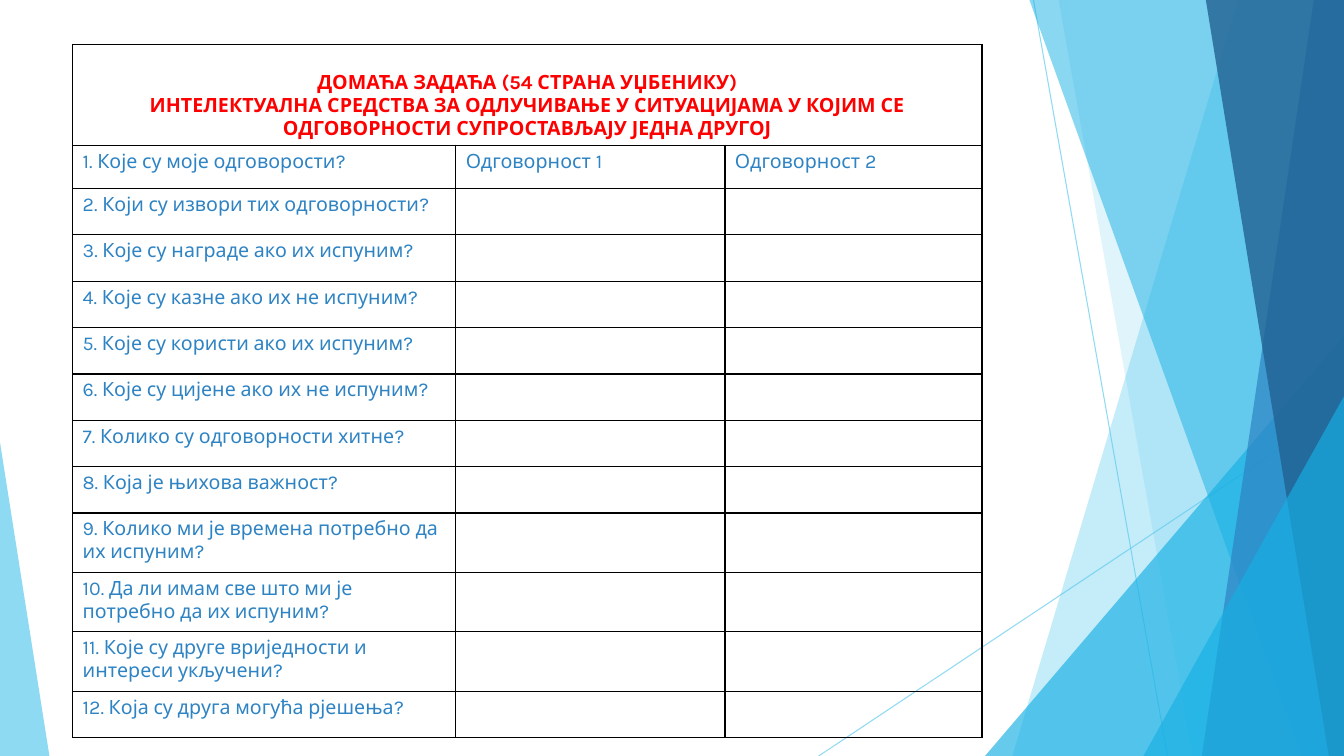
from lxml.etree import SubElement
from pptx import Presentation
from pptx.dml.color import RGBColor
from pptx.enum.shapes import MSO_CONNECTOR, MSO_SHAPE
from pptx.enum.text import MSO_ANCHOR, PP_ALIGN
from pptx.oxml.ns import qn
from pptx.util import Inches, Pt

COLORS = {
    "sky": "5FCBEF",
    "cyan": "17B0E4",
    "blue": "2E83C3",
    "navy": "226292",
    "red": "FF0000",
    "white": "FFFFFF",
    "black": "000000",
}
FONT = "Karla"
WIDTH, HEIGHT = 13.33, 7.5

TITLE = [
    "ДОМАЋА ЗАДАЋА (54 СТРАНА УЏБЕНИКУ)",
    "ИНТЕЛЕКТУАЛНА СРЕДСТВА ЗА ОДЛУЧИВАЊЕ У СИТУАЦИЈАМА У КОЈИМ СЕ "
    "ОДГОВОРНОСТИ СУПРОСТАВЉАЈУ ЈЕДНА ДРУГОЈ",
]
RESPONSIBILITIES = ["Одговорност 1", "Одговорност 2"]
QUESTIONS = [
    "Које су моје одговорости?",
    "Који су извори тих одговорности?",
    "Које су награде ако их испуним?",
    "Које су казне ако их не испуним?",
    "Које су користи ако их испуним?",
    "Које су цијене ако их не испуним?",
    "Колико су одговорности хитне?",
    "Која је њихова важност?",
    "Колико ми је времена потребно да их испуним?",
    "Да ли имам све што ми је потребно да их испуним?",
    "Које су друге вриједности и интереси укључени?",
    "Која су друга могућа рјешења?",
]
COL_WIDTHS = [3.8, 2.67, 2.55]
ROW_HEIGHTS = [1.0, 0.43] + [0.46] * 7 + [0.59] * 3 + [0.46]
WHITE_ROW = 10


def rgb(name):
    return RGBColor.from_string(COLORS[name])


def set_alpha(fill_parent, percent):
    color = fill_parent.find(".//" + qn("a:srgbClr"))
    SubElement(color, qn("a:alpha")).set("val", str(percent * 1000))


def style_facet(sp, color, alpha):
    sp.shadow.inherit = False
    sp.fill.solid()
    sp.fill.fore_color.rgb = rgb(color)
    set_alpha(sp._element.spPr, alpha)
    sp.line.fill.background()


def add_band(slide, top_left, bottom_left, color, alpha):
    """Add a band from a slanted left edge to the slide's right edge."""
    builder = slide.shapes.build_freeform(Inches(top_left), 0)
    corners = [(WIDTH, 0), (WIDTH, HEIGHT), (bottom_left, HEIGHT)]
    builder.add_line_segments([(Inches(x), Inches(y)) for x, y in corners])
    style_facet(builder.convert_to_shape(), color, alpha)


def add_corner(slide, left, top, width, apex, color, alpha):
    """Add a triangle that stands on the bottom edge of the slide."""
    sp = slide.shapes.add_shape(
        MSO_SHAPE.ISOSCELES_TRIANGLE, Inches(left), Inches(top),
        Inches(width), Inches(HEIGHT - top))
    sp.adjustments[0] = apex
    style_facet(sp, color, alpha)


def add_ray(slide, x1, y1, x2, y2):
    line = slide.shapes.add_connector(
        MSO_CONNECTOR.STRAIGHT, Inches(x1), Inches(y1), Inches(x2), Inches(y2))
    line.line.color.rgb = rgb("sky")
    line.line.width = Pt(0.75)
    set_alpha(line._element.spPr, 70)
    SubElement(line._element.spPr, qn("a:effectLst"))


def add_backdrop(slide):
    add_ray(slide, 10.25, 0, 11.58, HEIGHT)
    add_ray(slide, WIDTH, 4.03, 8.12, HEIGHT)
    add_band(slide, 12.28, 10.04, "sky", 36)
    add_band(slide, 10.5, 11.83, "sky", 20)
    add_corner(slide, 9.77, 3.33, 3.56, 1, "cyan", 66)
    add_band(slide, 10.21, 12.91, "cyan", 50)
    add_band(slide, 13.03, 11.92, "blue", 70)
    add_band(slide, 11.96, 13.18, "navy", 80)
    add_corner(slide, 11.34, 3.93, 1.99, 1, "cyan", 66)
    add_corner(slide, 0, 4.39, 0.49, 0, "sky", 70)


def set_borders(cell):
    tc_pr = cell._tc.get_or_add_tcPr()
    for i, side in enumerate(["lnL", "lnR", "lnT", "lnB"]):
        ln = tc_pr.makeelement(qn("a:" + side), {"w": str(Pt(1))})
        fill = SubElement(ln, qn("a:solidFill"))
        SubElement(fill, qn("a:srgbClr")).set("val", COLORS["black"])
        tc_pr.insert(i, ln)


def write_cell(cell, lines, color="blue", bold=False, align=PP_ALIGN.LEFT):
    tf = cell.text_frame
    tf.text = "\n".join(lines)
    for p in tf.paragraphs:
        p.alignment = align
        p.font.name = FONT
        p.font.size = Pt(14)
        p.font.bold = bold
        p.font.color.rgb = rgb(color)


def add_homework_table(slide):
    table = slide.shapes.add_table(
        len(ROW_HEIGHTS), len(COL_WIDTHS), Inches(0.72), Inches(0.44),
        Inches(sum(COL_WIDTHS)), Inches(sum(ROW_HEIGHTS))).table
    table.first_row = table.horz_banding = False
    for column, width in zip(table.columns, COL_WIDTHS):
        column.width = Inches(width)
    for row, height in zip(table.rows, ROW_HEIGHTS):
        row.height = Inches(height)
    for cell in table.iter_cells():
        cell.fill.background()
        set_borders(cell)

    title = table.cell(0, 0)
    title.merge(table.cell(0, 2))
    title.vertical_anchor = MSO_ANCHOR.BOTTOM
    write_cell(title, TITLE, "red", True, PP_ALIGN.CENTER)
    for number, question in enumerate(QUESTIONS, 1):
        write_cell(table.cell(number, 0), [f"{number}. {question}"])
    for col, name in enumerate(RESPONSIBILITIES, 1):
        write_cell(table.cell(1, col), [name])
    white_cell = table.cell(WHITE_ROW, 0)
    white_cell.fill.solid()
    white_cell.fill.fore_color.rgb = rgb("white")


def main():
    prs = Presentation()
    prs.slide_width, prs.slide_height = Inches(WIDTH), Inches(HEIGHT)
    slide = prs.slides.add_slide(prs.slide_layouts[6])
    add_backdrop(slide)
    add_homework_table(slide)
    prs.save("out.pptx")


if __name__ == "__main__":
    main()
